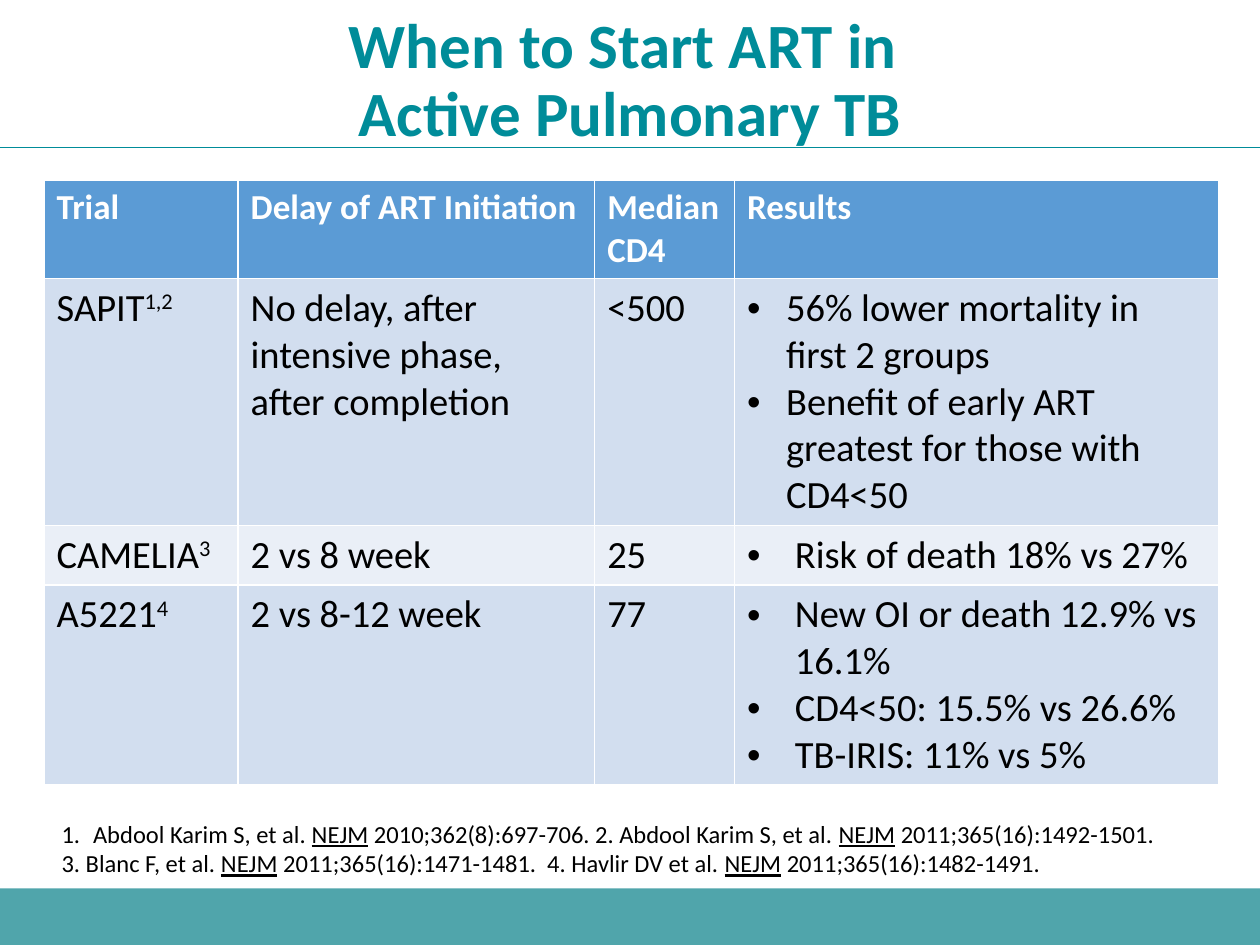
from lxml.etree import SubElement
from pptx import Presentation
from pptx.dml.color import RGBColor
from pptx.enum.shapes import MSO_CONNECTOR, MSO_SHAPE
from pptx.enum.text import MSO_ANCHOR, MSO_AUTO_SIZE, PP_ALIGN
from pptx.oxml.ns import qn
from pptx.util import Inches, Pt

TEAL = "008C99"
HEADER_FILL = "5B9BD5"
BAND_FILLS = ["D2DEEF", "EAEFF7"]
COLUMN_WIDTHS = [1.54, 2.83, 1.11, 3.84]
ROW_HEIGHTS = [0.77, 1.96, 0.47, 1.58]
HEADINGS = ["Trial", "Delay of ART Initiation", "Median CD4", "Results"]
TRIALS = [
    ("SAPIT|1,2|", "No delay, after intensive phase, after completion", "<500", 0.31,
     ["56% lower mortality in first 2 groups",
      "Benefit of early ART greatest for those with CD4<50"]),
    ("CAMELIA|3|", "2 vs 8 week", "25", 0.38, ["Risk of death 18% vs 27%"]),
    ("A5221|4|", "2 vs 8-12 week", "77", 0.38,
     ["New OI or death 12.9% vs 16.1%", "CD4<50: 15.5% vs 26.6%", "TB-IRIS: 11% vs 5%"]),
]
REFERENCES = [
    "Abdool Karim S, et al. |NEJM| 2010;362(8):697-706. 2. Abdool Karim S, et al. "
    "|NEJM| 2011;365(16):1492-1501.",
    "3. Blanc F, et al. |NEJM| 2011;365(16):1471-1481.  4. Havlir DV et al. "
    "|NEJM| 2011;365(16):1482-1491.",
]


def rgb(value):
    """Turn a hex string into a colour."""
    return RGBColor.from_string(value)


def set_fill(target, color):
    """Give a shape or cell a solid fill."""
    target.fill.solid()
    target.fill.fore_color.rgb = rgb(color)


def set_bullet(paragraph, indent, tag, **attributes):
    """Give a paragraph a hanging indent and a bullet or number."""
    properties = paragraph._p.get_or_add_pPr()
    properties.set("marL", str(Inches(indent)))
    properties.set("indent", str(-Inches(indent)))
    SubElement(properties, qn("a:buFont"), typeface="Arial" if tag == "a:buChar" else "+mj-lt")
    SubElement(properties, qn(tag), **attributes)


def write_text(frame, lines, size, color="000000", bold=False, align=None,
               spacing=None, bullet_indent=None, marked="superscript"):
    """Write one paragraph per line, styling the parts between bars."""
    for index, line in enumerate(lines):
        paragraph = frame.paragraphs[0] if index == 0 else frame.add_paragraph()
        paragraph.alignment = align
        paragraph.line_spacing = spacing
        if bullet_indent:
            set_bullet(paragraph, bullet_indent, "a:buChar", char="•")
        for position, part in enumerate(line.split("|")):
            if not part:
                continue
            run = paragraph.add_run()
            run.text = part
            run.font.name = "Calibri"
            run.font.size = Pt(size)
            run.font.bold = bold
            run.font.color.rgb = rgb(color)
            if position % 2 and marked == "underline":
                run.font.underline = True
            elif position % 2:
                run.font._element.set("baseline", "30000")


def add_footer_band(slide):
    """Draw the teal band along the bottom."""
    band = slide.shapes.add_shape(
        MSO_SHAPE.RECTANGLE, 0, Inches(7.05), Inches(10), Inches(0.45))
    band.shadow.inherit = False
    set_fill(band, "50A5AB")
    band.line.fill.background()


def add_title_rule(slide):
    """Draw the thin line under the title."""
    rule = slide.shapes.add_connector(
        MSO_CONNECTOR.STRAIGHT, 0, Inches(1.17), Inches(10), Inches(1.17))
    rule.line.color.rgb = rgb(TEAL)
    rule.line.width = Pt(0.5)
    SubElement(rule._element.spPr, qn("a:effectLst"))


def add_title(slide, lines):
    """Place and format the title."""
    title = slide.shapes.title
    title.left, title.top = Inches(0), Inches(0.07)
    title.width, title.height = Inches(10), Inches(1.17)
    frame = title.text_frame
    frame.auto_size = MSO_AUTO_SIZE.NONE
    frame.vertical_anchor = MSO_ANCHOR.MIDDLE
    write_text(frame, lines, 36, color=TEAL, bold=True, align=PP_ALIGN.CENTER, spacing=0.9)


def add_trials_table(slide):
    """Build the table that compares the trials."""
    table = slide.shapes.add_table(
        len(ROW_HEIGHTS), len(COLUMN_WIDTHS), Inches(0.35), Inches(1.43),
        Inches(sum(COLUMN_WIDTHS)), Inches(sum(ROW_HEIGHTS))).table
    for column, width in zip(table.columns, COLUMN_WIDTHS):
        column.width = Inches(width)
    for row, height in zip(table.rows, ROW_HEIGHTS):
        row.height = Inches(height)
    for column, heading in enumerate(HEADINGS):
        cell = table.cell(0, column)
        set_fill(cell, HEADER_FILL)
        write_text(cell.text_frame, [heading], 20, color="FFFFFF", bold=True)
    for row, (trial, delay, median, indent, results) in enumerate(TRIALS, start=1):
        for column, lines in enumerate([[trial], [delay], [median], results]):
            cell = table.cell(row, column)
            set_fill(cell, BAND_FILLS[(row - 1) % 2])
            write_text(cell.text_frame, lines, 22,
                       bullet_indent=indent if lines is results else None)


def add_references(slide):
    """Add the numbered citations below the table."""
    frame = slide.shapes.add_textbox(
        Inches(0.39), Inches(6.45), Inches(9.32), Inches(0.57)).text_frame
    frame.word_wrap = True
    set_bullet(frame.paragraphs[0], 0.25, "a:buAutoNum", type="arabicPeriod")
    write_text(frame, REFERENCES, 14, marked="underline")


def main():
    """Build and save the slide."""
    presentation = Presentation()
    presentation.slide_width, presentation.slide_height = Inches(10), Inches(7.5)
    slide = presentation.slides.add_slide(presentation.slide_layouts[5])
    add_footer_band(slide)
    add_title_rule(slide)
    add_title(slide, ["When to Start ART in ", "Active Pulmonary TB"])
    add_trials_table(slide)
    add_references(slide)
    presentation.save("out.pptx")


if __name__ == "__main__":
    main()
